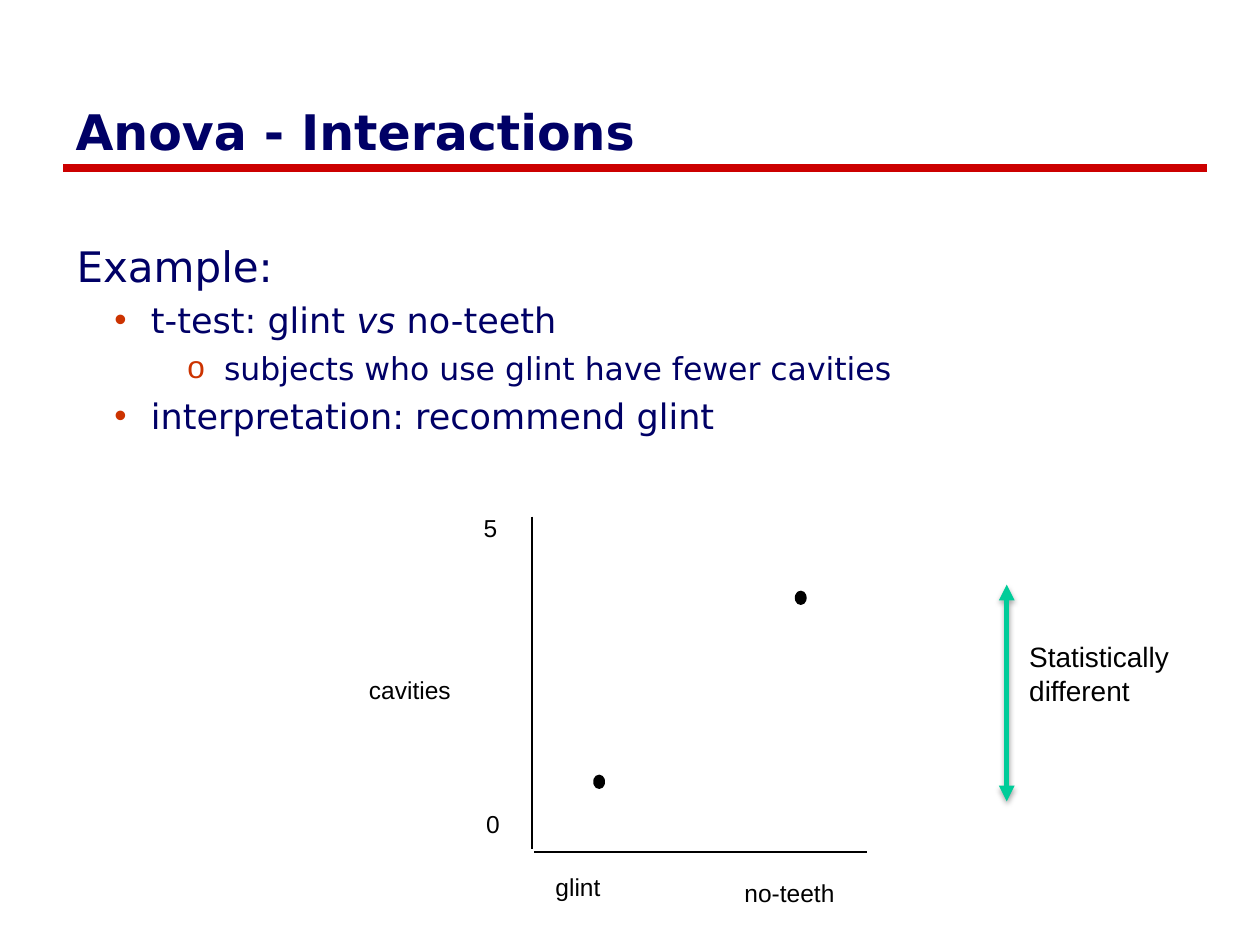
"""Builds the Anova interactions slide with its plot of two group means."""
from lxml import etree
from pptx import Presentation
from pptx.dml.color import RGBColor
from pptx.enum.shapes import MSO_CONNECTOR, MSO_SHAPE
from pptx.enum.text import MSO_ANCHOR, PP_ALIGN
from pptx.oxml import parse_xml
from pptx.oxml.ns import nsdecls, qn
from pptx.util import Inches, Pt

STRAIGHT = MSO_CONNECTOR.STRAIGHT
OVAL = MSO_SHAPE.OVAL
MIDDLE = MSO_ANCHOR.MIDDLE
LEFT = PP_ALIGN.LEFT

NAVY = RGBColor(0x00, 0x00, 0x66)
RED = RGBColor(0xCC, 0x00, 0x00)
GREEN = RGBColor(0x00, 0xCC, 0x99)
BLACK = RGBColor(0x00, 0x00, 0x00)
BULLET_COLOR = RGBColor(0xCC, 0x33, 0x00)


def add_line(x1, y1, x2, y2, color, width):
    line = slide.shapes.add_connector(
        STRAIGHT, Inches(x1), Inches(y1), Inches(x2), Inches(y2))
    line.line.color.rgb = color
    line.line.width = Pt(width)
    effects = etree.SubElement(line._element.spPr, qn("a:effectLst"))
    return line, effects


def add_text(left, top, width, height):
    frame = slide.shapes.add_textbox(
        Inches(left), Inches(top), Inches(width), Inches(height)).text_frame
    frame.word_wrap = True
    return frame


prs = Presentation()
prs.slide_width = Inches(10)
prs.slide_height = Inches(7.5)
slide = prs.slides.add_slide(prs.slide_layouts[5])

add_line(0.5, 1.33, 9.58, 1.33, RED, 4.5)

title = slide.shapes.title
title.left, title.top = Inches(0.5), Inches(0.75)
title.width, title.height = Inches(9.08), Inches(0.58)
title.text_frame.text = "Anova - Interactions"
title.text_frame.vertical_anchor = MIDDLE
heading = title.text_frame.paragraphs[0]
heading.alignment = LEFT
heading.font.name = "DejaVu Sans"
heading.font.size = Pt(28)
heading.font.bold = True
heading.font.color.rgb = NAVY

body = add_text(0.51, 1.86, 9.06, 5.2)
outline = [
    (0, 24, None, ["Example:"]),
    (1, 20, "•", ["t-test: glint ", "vs", " no-teeth"]),
    (2, 18, "o", ["subjects who use glint have fewer cavities"]),
    (1, 20, "•", ["interpretation: recommend glint"]),
]
for index, (level, size, bullet, pieces) in enumerate(outline):
    item = body.paragraphs[0] if index == 0 else body.add_paragraph()
    item.level = level
    if bullet:
        item.space_before = Pt(4.5)
        props = item._p.get_or_add_pPr()
        props.set("marL", str(Inches(0.01 + 0.58 * level)))
        props.set("indent", str(Inches(-0.29)))
        color = etree.SubElement(props, qn("a:buClr"))
        etree.SubElement(color, qn("a:srgbClr"), val=str(BULLET_COLOR))
        etree.SubElement(props, qn("a:buFont"), typeface="Arial")
        etree.SubElement(props, qn("a:buChar"), char=bullet)
    item.font.name = "DejaVu Sans"
    item.font.size = Pt(size)
    item.font.color.rgb = NAVY
    for piece in pieces:
        run = item.add_run()
        run.text = piece
        if piece == "vs":
            run.font.italic = True

add_line(4.22, 4.1, 4.22, 6.74, BLACK, 1)
add_line(6.88, 6.76, 4.24, 6.76, BLACK, 1)

labels = [
    ("cavities", 2.83, 5.31, 1.2, 0.55, 14),
    ("0", 3.76, 6.37, 0.44, 0.55, 14),
    ("5", 3.74, 4.02, 0.44, 0.55, 14),
    ("glint", 4.31, 6.87, 0.88, 0.55, 14),
    ("no-teeth", 5.81, 6.92, 1.29, 0.55, 14),
    ("Statistically \vdifferent", 8.07, 5.03, 1.39, 0.64, 16),
]
for text, left, top, width, height, size in labels:
    frame = add_text(left, top, width, height)
    frame.text = text
    label = frame.paragraphs[0]
    label.font.name = "Arial"
    label.font.size = Pt(size)
    label.font.color.rgb = BLACK

for left, top in [(4.75, 6.19), (6.35, 4.73)]:
    mean = slide.shapes.add_shape(
        OVAL, Inches(left), Inches(top), Inches(0.01), Inches(0.03))
    mean.shadow.inherit = False
    mean.fill.solid()
    mean.fill.fore_color.rgb = BLACK
    mean.line.color.rgb = BLACK
    mean.line.width = Pt(6)

difference, effects = add_line(7.99, 4.64, 7.99, 6.36, GREEN, 3)
stroke = difference.line._get_or_add_ln()
for end in ("a:headEnd", "a:tailEnd"):
    etree.SubElement(stroke, qn(end), type="triangle")
effects.append(parse_xml(
    f'<a:outerShdw {nsdecls("a")} blurRad="{Pt(3.1)}" dist="{Pt(1.8)}" '
    f'dir="5400000" rotWithShape="0"><a:srgbClr val="{BLACK}">'
    '<a:alpha val="35000"/></a:srgbClr></a:outerShdw>'))

prs.save("out.pptx")
